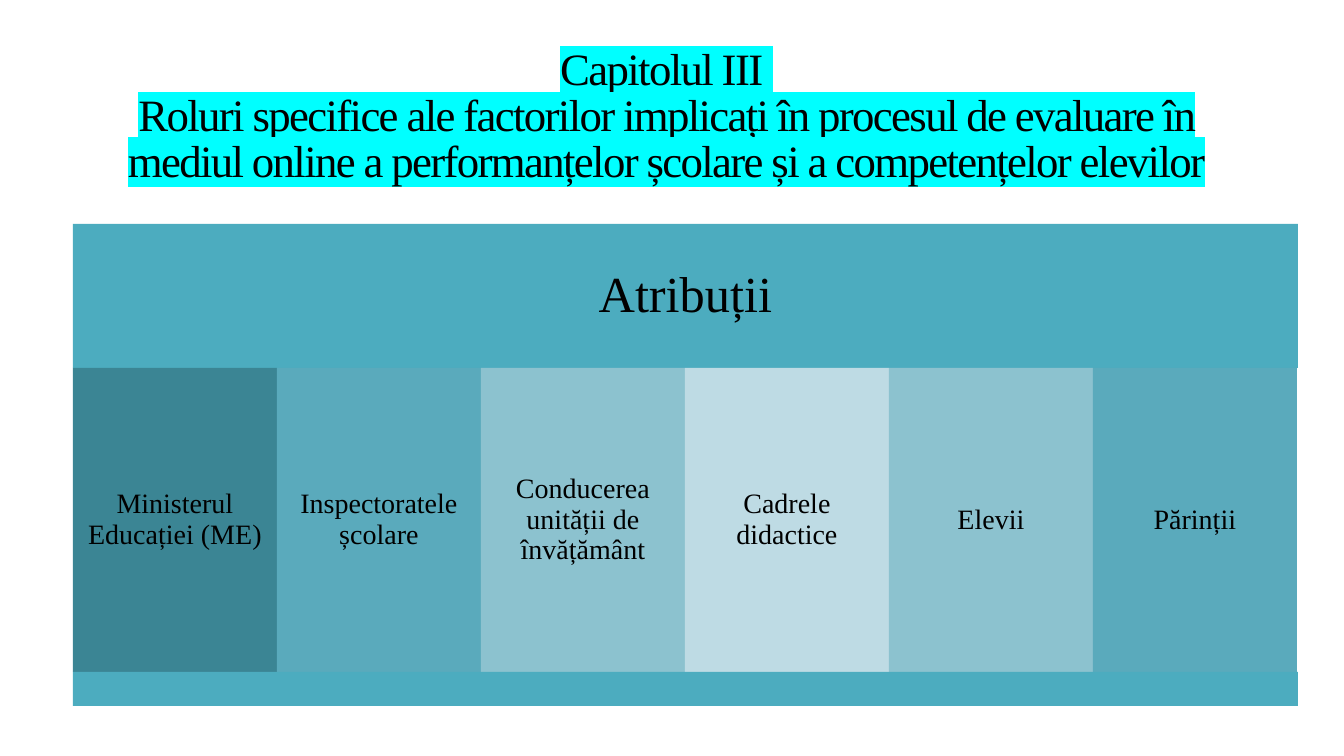
from lxml.etree import SubElement
from pptx import Presentation
from pptx.dml.color import RGBColor
from pptx.enum.shapes import MSO_SHAPE
from pptx.enum.text import MSO_ANCHOR, PP_ALIGN
from pptx.oxml.ns import qn
from pptx.util import Emu, Pt

EMU_PER_PX = 914400 / 100.8
FONT = "Times New Roman"
TITLE = ("Capitolul III \vRoluri specifice ale factorilor implicați în procesul de evaluare "
         "în mediul online a performanțelor școlare și a competențelor elevilor")
BAND = "4CACBF"
LEFT, WIDTH = 73, 1225
COLUMN_TOP, COLUMN_WIDTH, COLUMN_HEIGHT = 368, 204, 304
COLUMNS = [
    ("Ministerul Educației (ME)", "3B8594"),
    ("Inspectoratele școlare", "5AAABC"),
    ("Conducerea unității de învățământ", "8CC2CF"),
    ("Cadrele didactice", "BEDBE4"),
    ("Elevii", "8CC2CF"),
    ("Părinții", "5AAABC"),
]


def px(n):
    """Turn pixels into EMU."""
    return Emu(round(n * EMU_PER_PX))


def color(value):
    """Turn a hex string into a colour."""
    return RGBColor.from_string(value)


def set_text(s, text, size, spacing, inset_x, inset_y):
    """Write centred black text into a shape and return its runs."""
    tf = s.text_frame
    tf.word_wrap = True
    tf.vertical_anchor = MSO_ANCHOR.MIDDLE
    tf.margin_left = tf.margin_right = px(inset_x)
    tf.margin_top = tf.margin_bottom = px(inset_y)
    p = tf.paragraphs[0]
    p.text = text
    p.alignment = PP_ALIGN.CENTER
    p.line_spacing = spacing
    for r in p.runs:
        r.font.name = FONT
        r.font.size = Pt(size)
        r.font.color.rgb = color("000000")
    return p.runs


def add_title(slide):
    """Add the highlighted, tightly spaced title."""
    s = slide.shapes.add_textbox(px(73), px(27), px(1187), px(182))
    for r in set_text(s, TITLE, 32, 0.85, 10, 5):
        rPr = r.font._element
        rPr.set("spc", "-120")
        highlight = SubElement(rPr, qn("a:highlight"))
        SubElement(highlight, qn("a:srgbClr"), val="00FFFF")
        rPr.find(qn("a:solidFill")).addnext(highlight)


def add_block(slide, x, y, w, h, fill):
    """Add a plain filled rectangle."""
    s = slide.shapes.add_shape(MSO_SHAPE.RECTANGLE, px(x), px(y), px(w), px(h))
    s.shadow.inherit = False
    s.fill.solid()
    s.fill.fore_color.rgb = color(fill)
    s.line.fill.background()
    return s


def main():
    """Build and save the slide."""
    prs = Presentation()
    prs.slide_width, prs.slide_height = px(1344), px(756)
    slide = prs.slides.add_slide(prs.slide_layouts[6])
    add_title(slide)
    header = add_block(slide, LEFT, 224, WIDTH, 144, BAND)
    set_text(header, "Atribuții", 36, 0.9, 15, 15)
    for i, (label, fill) in enumerate(COLUMNS):
        column = add_block(slide, LEFT + i * COLUMN_WIDTH, COLUMN_TOP,
                           COLUMN_WIDTH, COLUMN_HEIGHT, fill)
        set_text(column, label, 20, 0.9, 8, 8)
    add_block(slide, LEFT, COLUMN_TOP + COLUMN_HEIGHT, WIDTH, 34, BAND)
    prs.save("out.pptx")


if __name__ == "__main__":
    main()
